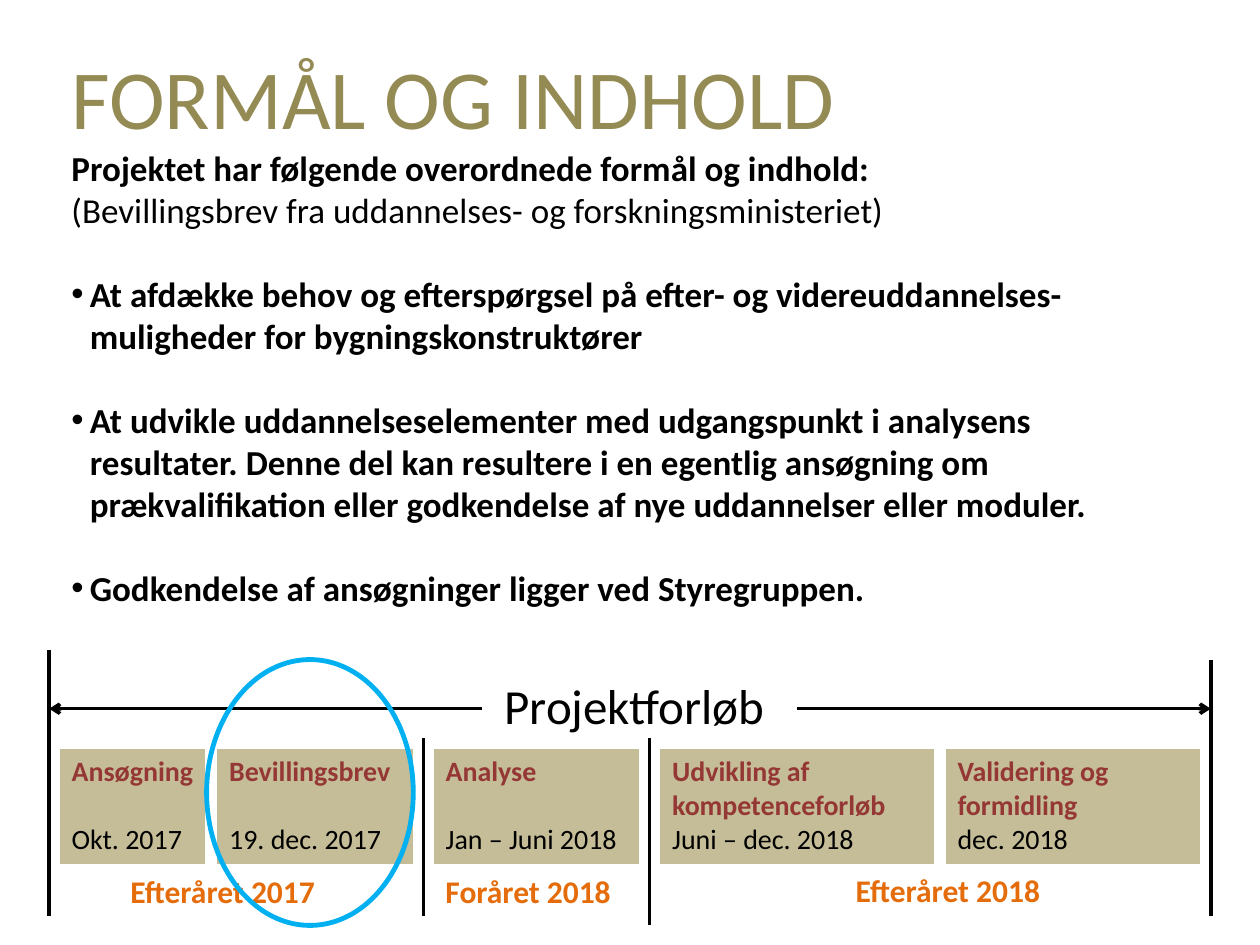
import pptx
import pptx.util
import pptx.dml.color
import pptx.enum.shapes
import pptx.oxml.ns
from dataclasses import dataclass
from lxml import etree

Pt = pptx.util.Pt
qn = pptx.oxml.ns.qn


@dataclass(frozen=True)
class Theme:
    font: str = "Calibri"
    title: str = "948A54"
    ink: str = "000000"
    head: str = "953735"
    term: str = "E46C0A"
    cell: str = "C4BD97"
    edge: str = "FFFFFF"
    ring: str = "00B0F0"
    big: int = 48
    span: int = 28
    body: int = 20
    label: int = 18
    small: int = 16


T = Theme()
INTRO = [
    ("FORMÅL OG INDHOLD", T.big, T.title, False),
    ("Projektet har følgende overordnede formål og indhold:", T.body, T.ink, True),
    ("(Bevillingsbrev fra uddannelses- og forskningsministeriet)", T.body, T.ink, False),
]
GOALS = [
    "At afdække behov og efterspørgsel på efter- og videreuddannelses-\v"
    "muligheder for bygningskonstruktører",
    "At udvikle uddannelseselementer med udgangspunkt i analysens\v"
    "resultater. Denne del kan resultere i en egentlig ansøgning om\v"
    "prækvalifikation eller godkendelse af nye uddannelser eller moduler.",
    "Godkendelse af ansøgninger ligger ved Styregruppen.",
]
# left, width, heading, date, blank line between them
PHASES = [
    (33.75, 84, "Ansøgning", "Okt. 2017", True),
    (123.75, 112.5, "Bevillingsbrev", "19. dec. 2017", True),
    (247.5, 118.1, "Analyse", "Jan – Juni 2018", True),
    (376.9, 157.5, "Udvikling af kompetenceforløb", "Juni – dec. 2018", False),
    (540, 146.25, "Validering og formidling", "dec. 2018", False),
]
TERMS = [
    (67.5, 495, 130, "Efteråret 2017"),
    (247.5, 495, 113, "Foråret 2018"),
    (481.9, 494, 125, "Efteråret 2018"),
]
BARS = [(28.1, 371.5, 523.5), (241.9, 422, 523.5),
        (371.25, 422, 528.5), (691.9, 376.9, 523.5)]
ARROWS = [(275.6, 28.1), (455.6, 691.9)]


def color(code):
    return pptx.dml.color.RGBColor.from_string(code)


def write(par, text, size, code, bold=False):
    par.text = text
    font = par.font
    font.name, font.size, font.bold = T.font, Pt(size), bold
    font.color.rgb = color(code)


def add_box(slide, left, top, width, height):
    box = slide.shapes.add_textbox(Pt(left), Pt(top), Pt(width), Pt(height))
    box.text_frame.word_wrap = True
    return box.text_frame


def add_dot(par, indent):
    """Give the paragraph a hanging bullet."""
    props = par._p.get_or_add_pPr()
    props.set("marL", str(Pt(indent)))
    props.set("indent", str(-Pt(indent)))
    kids = [etree.Element(qn("a:buFont"), typeface="Arial"),
            etree.Element(qn("a:buChar"), char="•")]
    spot = props.find(qn("a:defRPr"))
    for kid in kids:
        spot.addprevious(kid)


def add_body(slide):
    frame = add_box(slide, 33.75, 22.5, 646.5, 332)
    for i, item in enumerate(INTRO):
        par = frame.add_paragraph() if i else frame.paragraphs[0]
        write(par, *item)
    for goal in GOALS:
        par = frame.add_paragraph()
        write(par, goal, T.body, T.ink, True)
        par.space_before = Pt(24)
        add_dot(par, 10.5)


def add_line(slide, x1, y1, x2, y2, arrow=False):
    kind = pptx.enum.shapes.MSO_CONNECTOR.STRAIGHT
    line = slide.shapes.add_connector(kind, Pt(x1), Pt(y1), Pt(x2), Pt(y2))
    line.line.color.rgb = color(T.ink)
    line.line.width = Pt(2)
    if arrow:
        etree.SubElement(line.line._get_or_add_ln(), qn("a:tailEnd"), type="arrow")
    etree.SubElement(line._element.spPr, qn("a:effectLst"))


def add_edges(cell):
    props = cell._tc.get_or_add_tcPr()
    for i, (side, width) in enumerate([("L", 1), ("R", 1), ("T", 1), ("B", 3)]):
        edge = etree.Element(qn(f"a:ln{side}"), w=str(Pt(width)))
        fill = etree.SubElement(edge, qn("a:solidFill"))
        etree.SubElement(fill, qn("a:srgbClr"), val=T.edge)
        props.insert(i, edge)


def add_phase(slide, left, width, head, date, gap):
    grid = slide.shapes.add_table(1, 1, Pt(left), Pt(427.5), Pt(width), Pt(67.5)).table
    grid.first_row = grid.horz_banding = False
    cell = grid.cell(0, 0)
    cell.fill.solid()
    cell.fill.fore_color.rgb = color(T.cell)
    add_edges(cell)
    frame = cell.text_frame
    write(frame.paragraphs[0], head, T.small, T.head, True)
    par = frame.add_paragraph()
    write(par, date, T.small, T.ink)
    if gap:
        par.space_before = Pt(19.5)


def add_ring(slide):
    kind = pptx.enum.shapes.MSO_SHAPE.OVAL
    ring = slide.shapes.add_shape(kind, Pt(118.1), Pt(376.9), Pt(118.1), Pt(151.9))
    ring.shadow.inherit = False
    ring.fill.background()
    ring.line.color.rgb = color(T.ring)
    ring.line.width = Pt(2.75)


def main():
    deck = pptx.Presentation()
    deck.slide_width, deck.slide_height = Pt(720), Pt(540)
    slide = deck.slides.add_slide(deck.slide_layouts[6])
    add_body(slide)
    for x, top, end in BARS:
        add_line(slide, x, top, x, end)
    for start, end in ARROWS:
        add_line(slide, start, 405, end, 405, arrow=True)
    span = add_box(slide, 281.25, 382.5, 186, 41)
    write(span.paragraphs[0], "Projektforløb", T.span, T.ink)
    for phase in PHASES:
        add_phase(slide, *phase)
    for left, top, width, text in TERMS:
        frame = add_box(slide, left, top, width, 29)
        write(frame.paragraphs[0], text, T.label, T.term, True)
    add_ring(slide)
    deck.save("out.pptx")


if __name__ == "__main__":
    main()
